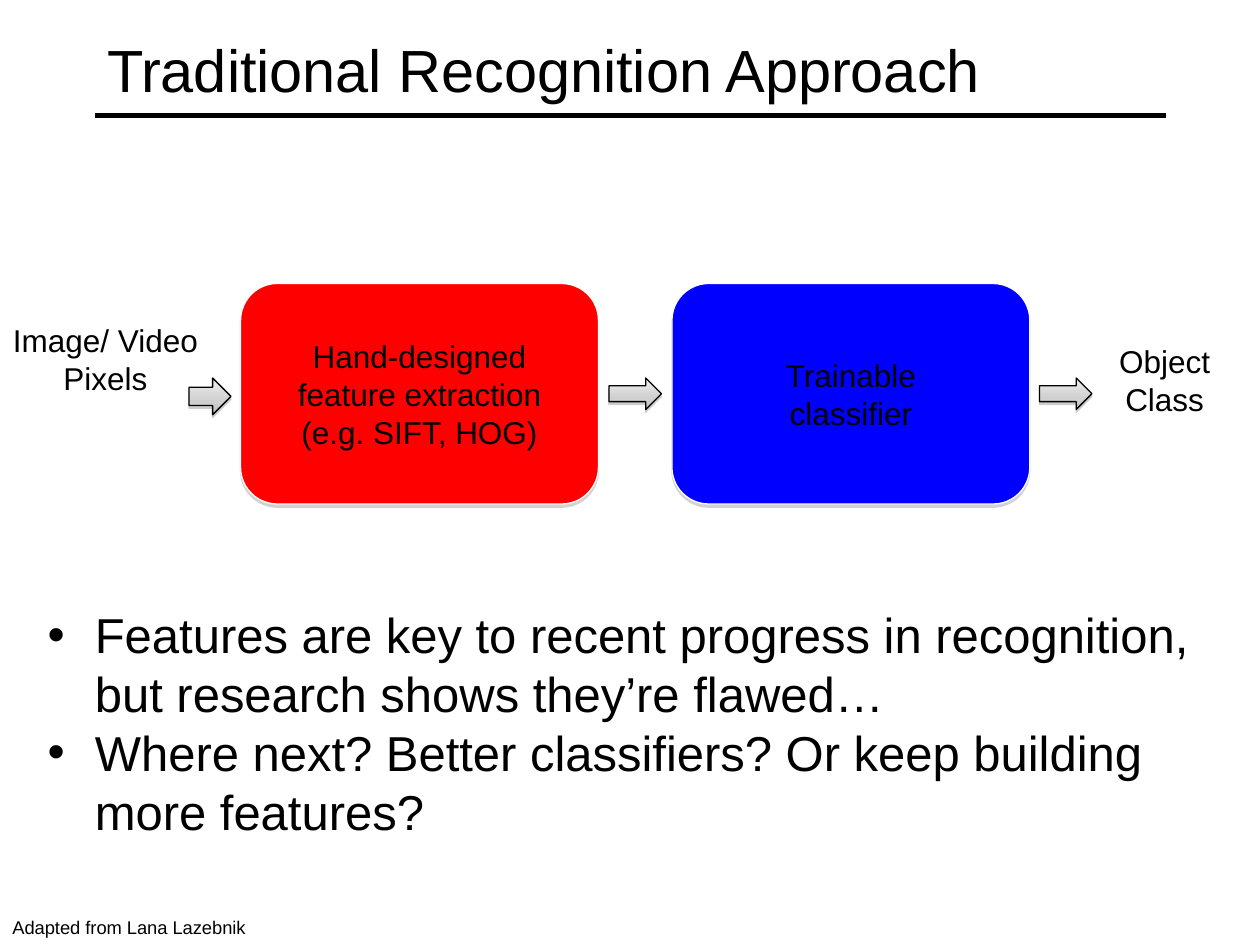
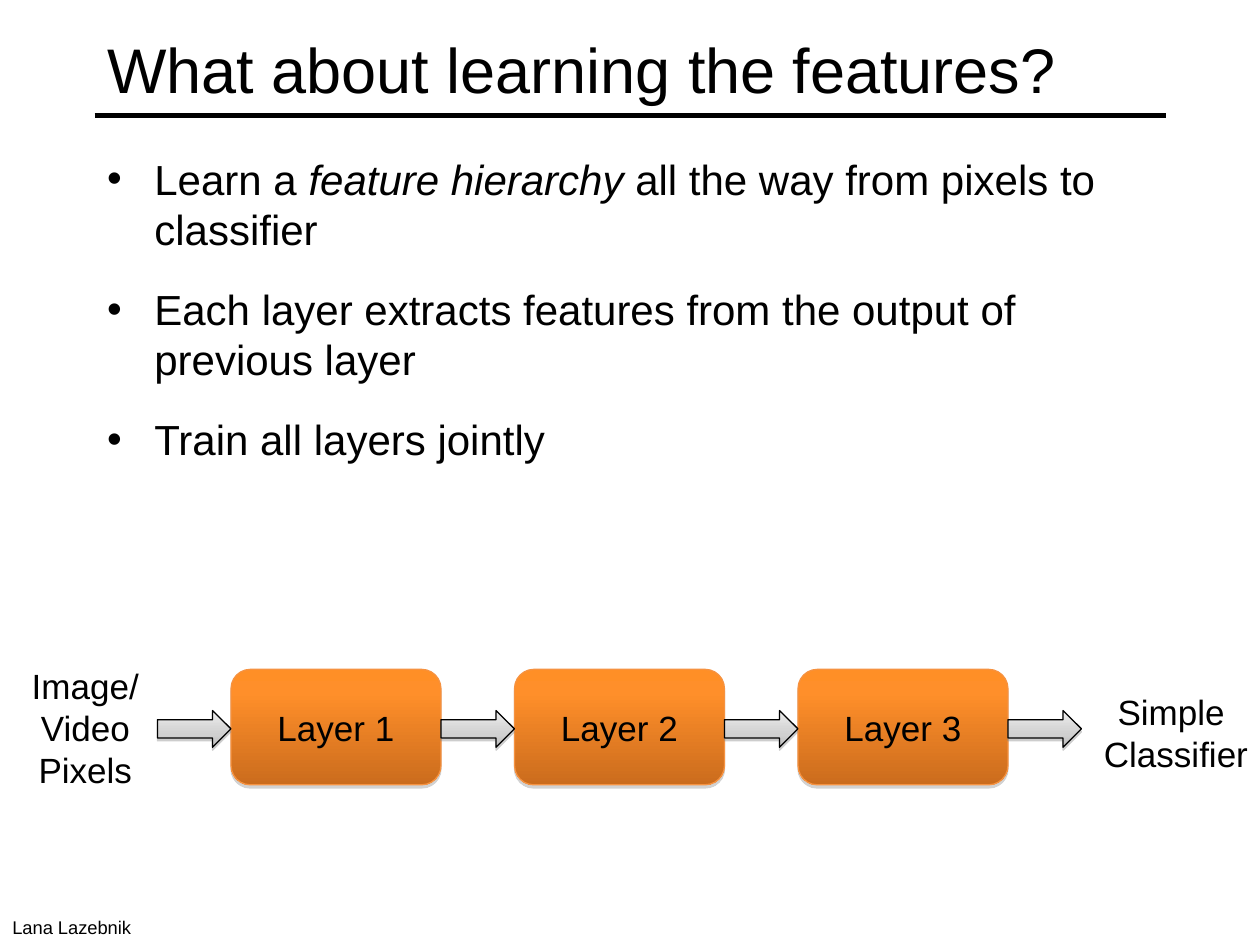
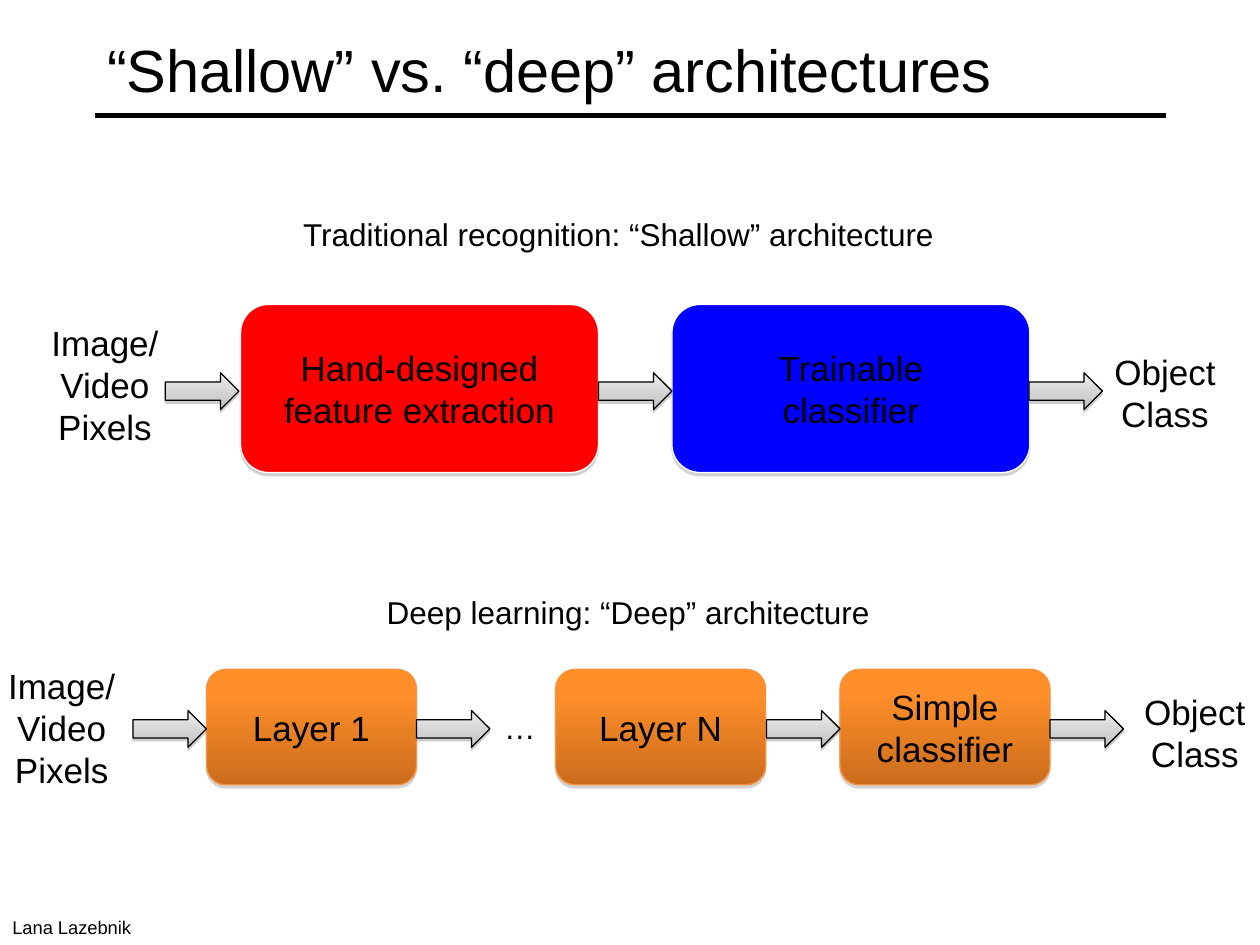
"""Build three slides on shallow and deep recognition architectures."""
from copy import deepcopy

from lxml import etree
from pptx import Presentation
from pptx.dml.color import RGBColor
from pptx.enum import shapes, text
from pptx.oxml import ns
from pptx.util import Pt

FONT = "Arial"
BLACK, WHITE, RED, BLUE = "000000", "FFFFFF", "FF0000", "0000FF"
ORANGE_EDGE = "F69240"
ORANGE = [(0, "FF8F26"), (0.2, "FF8F2A"), (1, "CB6C1D")]
SILVER = [(0, "EDEDED"), (0.65, "D0D0D0"), (1, "BCBCBC")]
CENTER, LEFT = text.PP_ALIGN.CENTER, text.PP_ALIGN.LEFT
BLOCK, ARROW = shapes.MSO_SHAPE.ROUNDED_RECTANGLE, shapes.MSO_SHAPE.RIGHT_ARROW
color = RGBColor.from_string


def write(frame, content, size=20, align=CENTER, wrap=True, anchor=text.MSO_ANCHOR.TOP,
          before=None, after=None):
    """Fill a frame; newlines part paragraphs, \\v breaks a line, asterisks mark italics."""
    frame.word_wrap = wrap
    frame.auto_size = text.MSO_AUTO_SIZE.NONE
    frame.vertical_anchor = anchor
    for number, line in enumerate(content.split("\n")):
        paragraph = frame.add_paragraph() if number else frame.paragraphs[0]
        paragraph.alignment = align
        if before is not None:
            paragraph.space_before = Pt(before)
        if after is not None:
            paragraph.space_after = Pt(after)
        for part, phrase in enumerate(line.split("*")):
            for row, words in enumerate(phrase.split("\v")):
                if row:
                    paragraph.add_line_break()
                run = paragraph.add_run()
                run.text = words
                run.font.name, run.font.size = FONT, Pt(size)
                run.font.color.rgb = color(BLACK)
                if part % 2:
                    run.font.italic = True


def draw(slide, preset, box, fill, edge, drop, opacity):
    """Add an outlined shape with a flat or graded fill and a soft drop shadow."""
    shape = slide.shapes.add_shape(preset, *map(Pt, box))
    if isinstance(fill, str):
        shape.fill.solid()
        shape.fill.fore_color.rgb = color(fill)
    else:
        shape.fill.gradient()
        shape.fill.gradient_angle = 270
        stop_list = shape.element.spPr.find(".//" + ns.qn("a:gsLst"))
        stop_list.insert(1, deepcopy(stop_list[0]))
        for stop, (position, tone) in zip(shape.fill.gradient_stops, fill):
            stop.position, stop.color.rgb = position, color(tone)
    shape.line.color.rgb = color(edge)
    shape.line.width = Pt(0.75)
    shape.shadow.inherit = False
    effects = shape.element.spPr.find(ns.qn("a:effectLst"))
    shadow = etree.SubElement(effects, ns.qn("a:outerShdw"), blurRad="0", dist=str(Pt(drop)),
                              dir="5400000", rotWithShape="0")
    tone = etree.SubElement(shadow, ns.qn("a:srgbClr"), val="808080")
    etree.SubElement(tone, ns.qn("a:alpha"), val=str(opacity * 1000))
    return shape


prs = Presentation()
prs.slide_width, prs.slide_height = Pt(720), Pt(540)

topics = [
    ("Traditional Recognition Approach", 34, "Adapted from Lana Lazebnik", 150.5),
    ("What about learning the features?", 36, "Lana Lazebnik", 83.5),
    ("“Shallow” vs. “deep” architectures", 34, "Lana Lazebnik", 83.5),
]
bullets = {
    0: ("Features are key to recent progress in recognition, but research shows they’re flawed…\n"
        "Where next? Better classifiers? Or keep building more features?",
        (20, 342, 687.5, 132), {"size": 28, "before": 0}),
    1: ("Learn a *feature hierarchy* all the way from pixels to classifier\n"
        "Each layer extracts features from the output of previous layer\n"
        "Train all layers jointly",
        (54, 84, 612, 402), {"size": 24, "after": 12}),
}
for index, (heading, size, credit, credit_width) in enumerate(topics):
    slide = prs.slides.add_slide(prs.slide_layouts[1 if index in bullets else 5])
    title = slide.shapes.title
    title.left, title.top, title.width, title.height = map(Pt, (54, 6, 612, 66))
    write(title.text_frame, heading, size=size, align=LEFT, anchor=text.MSO_ANCHOR.MIDDLE)
    if index in bullets:
        points, box, style = bullets[index]
        body = slide.placeholders[1]
        body.left, body.top, body.width, body.height = map(Pt, box)
        write(body.text_frame, points, align=LEFT, **style)
    source = slide.shapes.add_textbox(Pt(0), Pt(520), Pt(credit_width), Pt(20))
    write(source.text_frame, credit, size=10.5, align=LEFT, wrap=False)

rule = prs.slides[0].shapes.add_connector(
    shapes.MSO_CONNECTOR.STRAIGHT, Pt(54), Pt(66), Pt(666), Pt(66))
rule.line.color.rgb, rule.line.width = color(BLACK), Pt(3)
etree.SubElement(rule.element.spPr, ns.qn("a:effectLst"))
prs.slide_master.element.cSld.spTree.append(rule.element)

wide, narrow = 204.5, 120
layer_arrow = (406, 42, 21)
pipelines = [
    (0, 162, wide, 126, 18,
     [(137.5, "Hand-designed\vfeature extraction (e.g. SIFT, HOG)", RED, WHITE),
      (384, "Trainable\vclassifier", BLUE, WHITE)],
     [348, 594], (216, 30, 18)),
    (0, 0, 0, 0, 0, [], [108], (216, 24, 21)),
    (1, 382.5, narrow, 66, 20,
     [(132 + 162 * n, f"Layer {n + 1}", ORANGE, ORANGE_EDGE) for n in range(3)],
     [90 + 162 * n for n in range(4)], layer_arrow),
    (2, 174, wide, 96, 20,
     [(137.5, "Hand-designed\vfeature extraction", RED, WHITE),
      (384, "Trainable\vclassifier", BLUE, WHITE)],
     [94.5, 342, 588], (213, 42, 21)),
    (2, 382.5, narrow, 66, 20,
     [(118, "Layer 1", ORANGE, ORANGE_EDGE),
      (317.5, "Layer N", ORANGE, ORANGE_EDGE),
      (480, "Simple classifier", ORANGE, ORANGE_EDGE)],
     [76, 238, 438, 600], layer_arrow),
]
for index, top, width, height, size, stages, arrows, (arrow_top, length, thickness) in pipelines:
    slide = prs.slides[index]
    for left, name, fill, edge in stages:
        stage = draw(slide, BLOCK, (left, top, width, height), fill, edge, 1.8, 35)
        write(stage.text_frame, name, size=size, anchor=text.MSO_ANCHOR.MIDDLE)
    for left in arrows:
        draw(slide, ARROW, (left, arrow_top, length, thickness), SILVER, BLACK, 1.6, 38)

pixels = "Image/ Video\nPixels"
labels = [
    (0, pixels, (-11, 180, 142.5, 94), {"size": 18}),
    (0, "Object\vClass", (623.5, 192, 84, 65.5), {"size": 18, "wrap": False}),
    (1, "Simple \vClassifier", (623, 391, 98, 55.5), {"wrap": False}),
    (1, pixels, (-4.5, 376, 106.5, 80), {}),
    (2, pixels, (6, 180, 108, 80), {}),
    (2, "Object\vClass", (629.5, 196.5, 72.5, 55.5), {"wrap": False}),
    (2, "Object Class", (633.5, 391, 98.5, 55.5), {}),
    (2, pixels, (-18, 376, 106.5, 80), {}),
    (2, "Traditional recognition: “Shallow” architecture", (164, 119.5, 379, 29),
     {"size": 18, "wrap": False}),
    (2, "Deep learning: “Deep” architecture", (212.5, 335.5, 293, 29),
     {"size": 18, "wrap": False}),
    (2, "…", (281, 401, 39, 36), {"size": 18, "align": LEFT, "wrap": False}),
]
for index, words, box, style in labels:
    label = prs.slides[index].shapes.add_textbox(*map(Pt, box))
    write(label.text_frame, words, **style)

prs.save("out.pptx")
